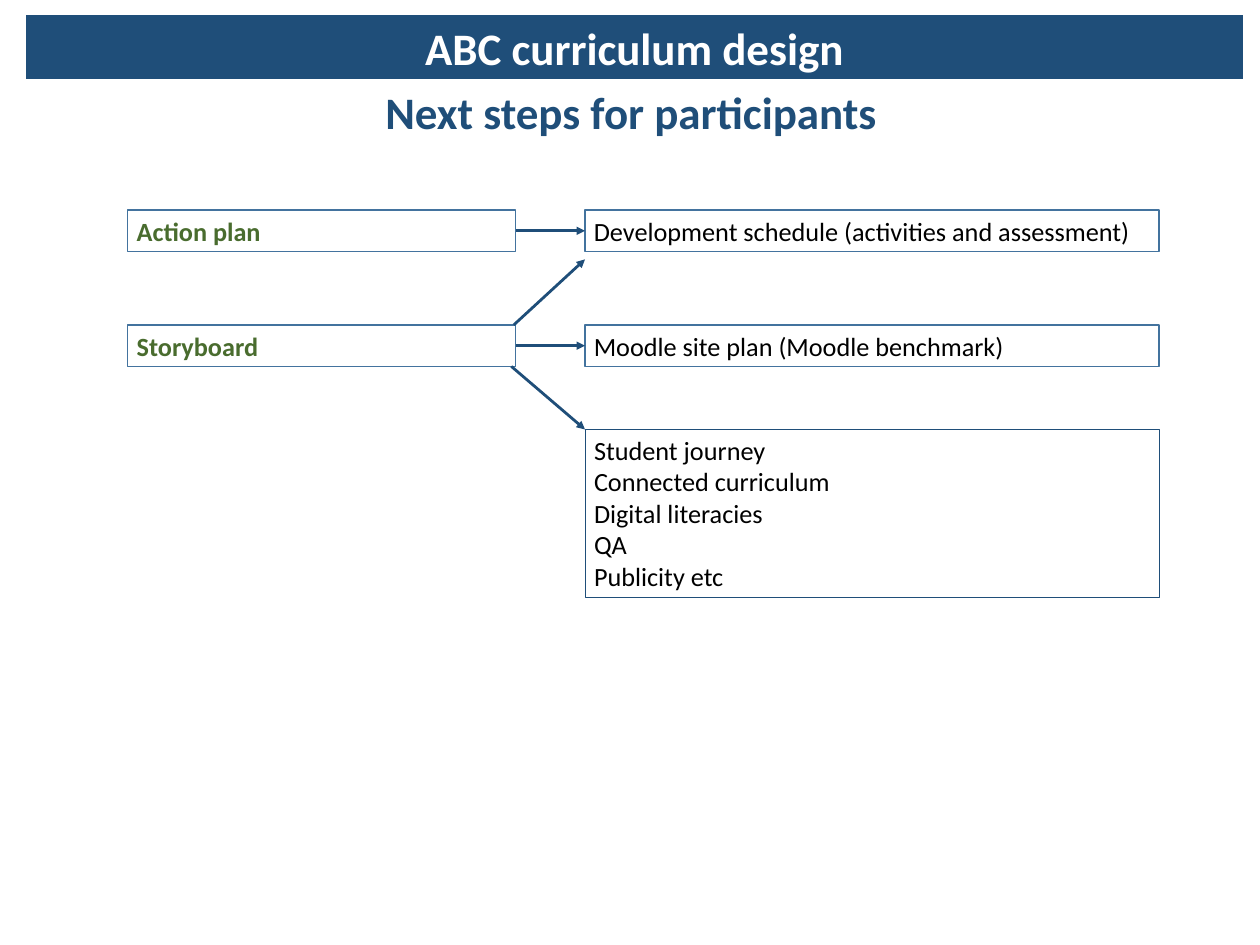
from dataclasses import dataclass

import pptx
import pptx.dml.color
import pptx.enum.shapes
import pptx.enum.text
import pptx.oxml.ns
import pptx.oxml.xmlchemy
import pptx.shapes.autoshape
import pptx.shapes.connector
import pptx.slide
import pptx.text.text
import pptx.util
from lxml import etree
from pptx.util import Cm

COLORS = {
    "navy": "1F4E79",
    "outline": "43739E",
    "green": "496C2E",
    "black": "000000",
    "white": "FFFFFF",
}
FONT = "Calibri"
HEADING_SIZE = 36
BODY_SIZE = 21

PLAN_LEFT, PLAN_WIDTH = 3.61, 10.95
OUTCOME_LEFT, OUTCOME_WIDTH = 16.51, 16.2
ACTION_TOP, STORYBOARD_TOP, THEMES_TOP = 5.93, 9.17, 12.12
BOX_HEIGHT = 1.17

THEMES = [
    "Student journey",
    "Connected curriculum",
    "Digital literacies",
    "QA",
    "Publicity etc",
]


@dataclass
class Step:
    top: float
    plan: str
    outcome: str


@dataclass
class Branch:
    start: tuple[float, float]
    end: tuple[float, float]


STEPS = [
    Step(ACTION_TOP, "Action plan", "Development schedule (activities and assessment)"),
    Step(STORYBOARD_TOP, "Storyboard", "Moodle site plan (Moodle benchmark)"),
]
BRANCHES = [
    Branch((14.43, STORYBOARD_TOP + BOX_HEIGHT), (OUTCOME_LEFT, THEMES_TOP)),
    Branch((14.5, STORYBOARD_TOP), (OUTCOME_LEFT, 7.32)),
]


def rgb(color: str) -> pptx.dml.color.RGBColor:
    return pptx.dml.color.RGBColor.from_string(COLORS[color])


def place(shape, left: float, top: float, width: float, height: float) -> None:
    shape.left, shape.top = Cm(left), Cm(top)
    shape.width, shape.height = Cm(width), Cm(height)


def style(paragraph, size: int, color: str, bold: bool, centered: bool = False) -> None:
    align = pptx.enum.text.PP_ALIGN
    paragraph.alignment = align.CENTER if centered else align.LEFT
    paragraph.font.name = FONT
    paragraph.font.size = pptx.util.Pt(size)
    paragraph.font.bold = bold
    paragraph.font.color.rgb = rgb(color)


def write_heading(shape, text: str, color: str) -> None:
    frame = shape.text_frame
    frame.text = text
    frame.word_wrap = True
    frame.auto_size = pptx.enum.text.MSO_AUTO_SIZE.NONE
    style(frame.paragraphs[0], HEADING_SIZE, color, bold=True, centered=True)


def write_themes(body) -> None:
    place(body, OUTCOME_LEFT, THEMES_TOP, OUTCOME_WIDTH, 4.75)
    body.line.color.rgb = rgb("navy")
    body.line.width = pptx.util.Pt(0.75)
    frame = body.text_frame
    frame.text = "\n".join(THEMES)
    frame.auto_size = pptx.enum.text.MSO_AUTO_SIZE.NONE
    for paragraph in frame.paragraphs:
        properties = paragraph._p.get_or_add_pPr()
        properties.set("marL", "0")
        properties.set("indent", "0")
        etree.SubElement(properties, pptx.oxml.ns.qn("a:buNone"))
        paragraph.space_before = pptx.util.Pt(0)
        style(paragraph, BODY_SIZE, "black", bold=False)


def add_box(
    slide: pptx.slide.Slide, left: float, top: float, width: float,
    text: str, color: str, bold: bool,
) -> pptx.shapes.autoshape.Shape:
    box = slide.shapes.add_shape(
        pptx.enum.shapes.MSO_SHAPE.RECTANGLE,
        Cm(left), Cm(top), Cm(width), Cm(BOX_HEIGHT),
    )
    box.shadow.inherit = False
    box.fill.solid()
    box.fill.fore_color.rgb = rgb("white")
    box.line.color.rgb = rgb("outline")
    box.line.width = pptx.util.Pt(1)
    frame = box.text_frame
    frame.text = text
    frame.word_wrap = True
    frame.vertical_anchor = pptx.enum.text.MSO_ANCHOR.MIDDLE
    style(frame.paragraphs[0], BODY_SIZE, color, bold)
    return box


def add_arrow(
    slide: pptx.slide.Slide, start: tuple[float, float], end: tuple[float, float],
) -> pptx.shapes.connector.Connector:
    arrow = slide.shapes.add_connector(
        pptx.enum.shapes.MSO_CONNECTOR.STRAIGHT,
        Cm(start[0]), Cm(start[1]), Cm(end[0]), Cm(end[1]),
    )
    arrow.line.color.rgb = rgb("navy")
    arrow.line.width = pptx.util.Pt(2.25)
    qn = pptx.oxml.ns.qn
    etree.SubElement(arrow.line._get_or_add_ln(), qn("a:tailEnd"), type="triangle")
    etree.SubElement(arrow._element.spPr, qn("a:effectLst"))
    return arrow


def add_step(slide: pptx.slide.Slide, step: Step) -> None:
    plan = add_box(slide, PLAN_LEFT, step.top, PLAN_WIDTH, step.plan, "green", True)
    outcome = add_box(
        slide, OUTCOME_LEFT, step.top, OUTCOME_WIDTH, step.outcome, "black", False
    )
    middle = step.top + BOX_HEIGHT / 2
    arrow = add_arrow(slide, (PLAN_LEFT + PLAN_WIDTH, middle), (OUTCOME_LEFT, middle))
    arrow.begin_connect(plan, 3)
    arrow.end_connect(outcome, 1)


def main() -> None:
    presentation = pptx.Presentation()
    presentation.slide_width, presentation.slide_height = Cm(35.56), Cm(26.67)
    slide = presentation.slides.add_slide(presentation.slide_layouts[1])

    title = slide.shapes.title
    place(title, 0.74, 0.43, 34.34, 1.8)
    title.fill.solid()
    title.fill.fore_color.rgb = rgb("navy")
    write_heading(title, "ABC curriculum design", "white")

    subtitle = slide.shapes.add_textbox(Cm(1.07), Cm(2.26), Cm(33.48), Cm(1.8))
    write_heading(subtitle, "Next steps for participants", "navy")

    write_themes(slide.placeholders[1])
    for step in STEPS:
        add_step(slide, step)
    for branch in BRANCHES:
        add_arrow(slide, branch.start, branch.end)

    presentation.save("out.pptx")


if __name__ == "__main__":
    main()
